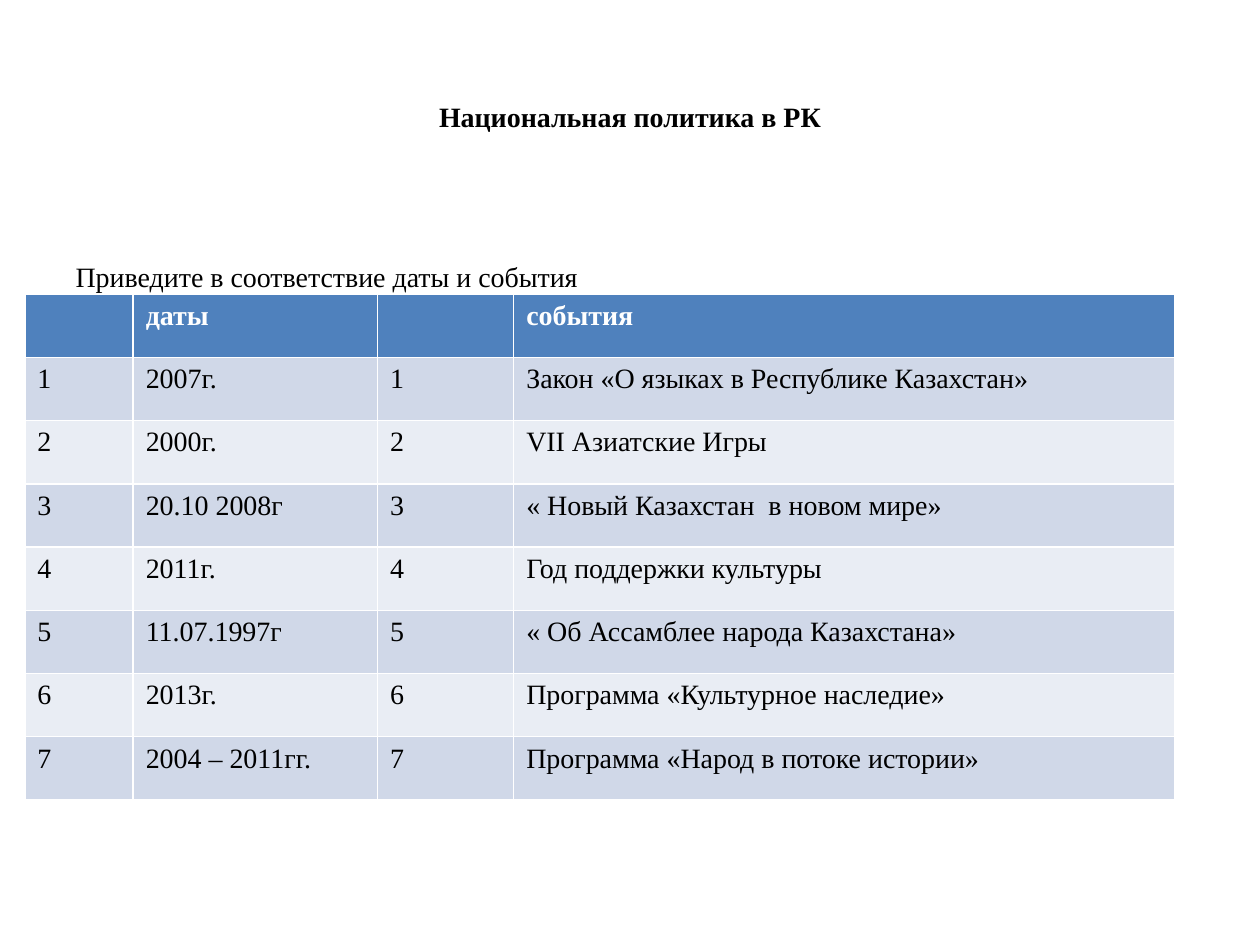
import pptx
import pptx.dml.color
import pptx.enum.text
import pptx.util
import lxml.etree

Pt = pptx.util.Pt
BLACK = pptx.dml.color.RGBColor(0x00, 0x00, 0x00)
WHITE = pptx.dml.color.RGBColor(0xFF, 0xFF, 0xFF)
HEADER_BLUE = pptx.dml.color.RGBColor(0x4F, 0x81, 0xBD)
BAND_DARK = pptx.dml.color.RGBColor(0xD0, 0xD8, 0xE8)
BAND_LIGHT = pptx.dml.color.RGBColor(0xE9, 0xED, 0xF4)

HEADINGS = ("", "даты", "", "события")
DATES_AND_EVENTS = (
    ("2007г.", "Закон «О языках в Республике Казахстан»"),
    ("2000г.", "VII Азиатские Игры"),
    ("20.10 2008г", "« Новый Казахстан  в новом мире»"),
    ("2011г.", "Год поддержки культуры"),
    ("11.07.1997г", "« Об Ассамблее народа Казахстана»"),
    ("2013г.", "Программа «Культурное наследие»"),
    ("2004 – 2011гг.", "Программа «Народ в потоке истории»"),
)
COLUMN_SHARES = (0.86, 1.94, 1.08, 5.25)


def add_text(paragraph, text, color=BLACK, bold=False):
    """Add one formatted run to a paragraph."""
    run = paragraph.add_run()
    run.text = text
    run.font.name = "Times New Roman"
    run.font.size = Pt(16)
    run.font.bold = bold
    run.font.color.rgb = color


def place(placeholder, left, top, width, height):
    """Move a placeholder into the given box."""
    placeholder.left, placeholder.top = Pt(left), Pt(top)
    placeholder.width, placeholder.height = Pt(width), Pt(height)


def fill_title(title, left, top, width, height):
    """Write the topic of the slide in the given box."""
    place(title, left, top, width, height)
    title.text_frame.vertical_anchor = pptx.enum.text.MSO_ANCHOR.MIDDLE
    heading = title.text_frame.paragraphs[0]
    heading.alignment = pptx.enum.text.PP_ALIGN.CENTER
    add_text(heading, "Национальная политика в РК", bold=True)


def fill_task(task, left, top, width, height):
    """Write the unbulleted task line in the given box."""
    place(task, left, top, width, height)
    task.text_frame.margin_top = Pt(22.5)
    instruction = task.text_frame.paragraphs[0]
    instruction.space_before = Pt(0)
    properties = instruction._p.get_or_add_pPr()
    properties.set("marL", "0")
    properties.set("indent", "0")
    lxml.etree.SubElement(properties, pptx.oxml.ns.qn("a:buNone"))
    add_text(instruction, "Приведите в соответствие даты и события")


def add_matching_table(slide, left, top, width, height):
    """Add the numbered dates and events in the given box."""
    numbered = [(str(number), date, str(number), event)
                for number, (date, event) in enumerate(DATES_AND_EVENTS, 1)]
    rows = [HEADINGS, *numbered]
    matching = slide.shapes.add_table(
        len(rows), len(HEADINGS), Pt(left), Pt(top), Pt(width), Pt(height)).table
    for column, share in zip(matching.columns, COLUMN_SHARES):
        column.width = Pt(width * share / sum(COLUMN_SHARES))
    for row_index, texts in enumerate(rows):
        is_header = row_index == 0
        band = BAND_DARK if row_index % 2 else BAND_LIGHT
        for column_index, text in enumerate(texts):
            cell = matching.cell(row_index, column_index)
            cell.fill.solid()
            cell.fill.fore_color.rgb = HEADER_BLUE if is_header else band
            if text:
                add_text(cell.text_frame.paragraphs[0], text,
                         WHITE if is_header else BLACK, is_header)


def main():
    """Build and save the slide."""
    presentation = pptx.Presentation()
    presentation.slide_width, presentation.slide_height = Pt(720), Pt(540)
    slide = presentation.slides.add_slide(presentation.slide_layouts[1])
    fill_title(slide.shapes.title, 36, 21.6, 648, 90)
    fill_task(slide.placeholders[1], 36, 126, 648, 356.4)
    add_matching_table(slide, 14.2, 168, 657.4, 289.2)
    presentation.save("out.pptx")


if __name__ == "__main__":
    main()
